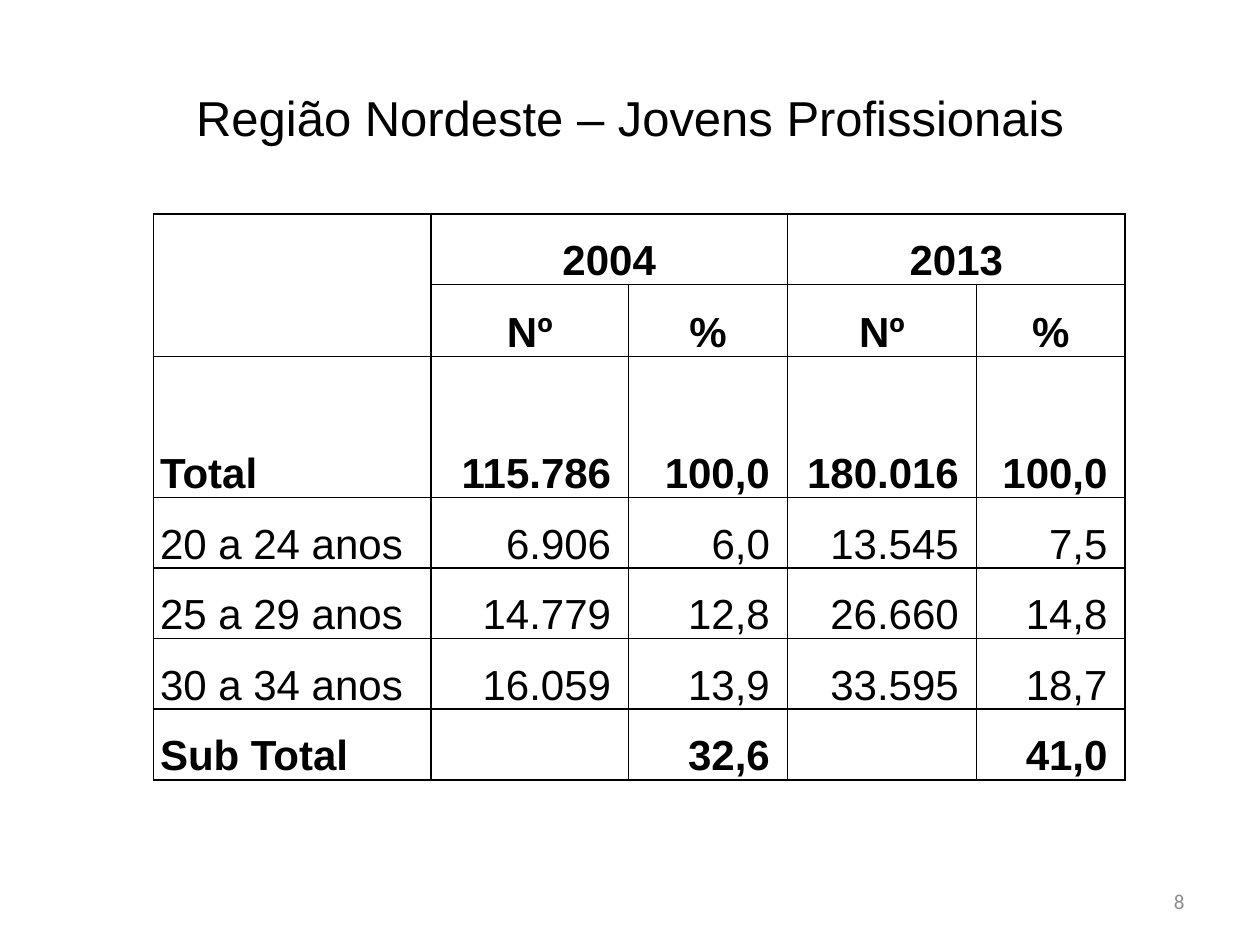
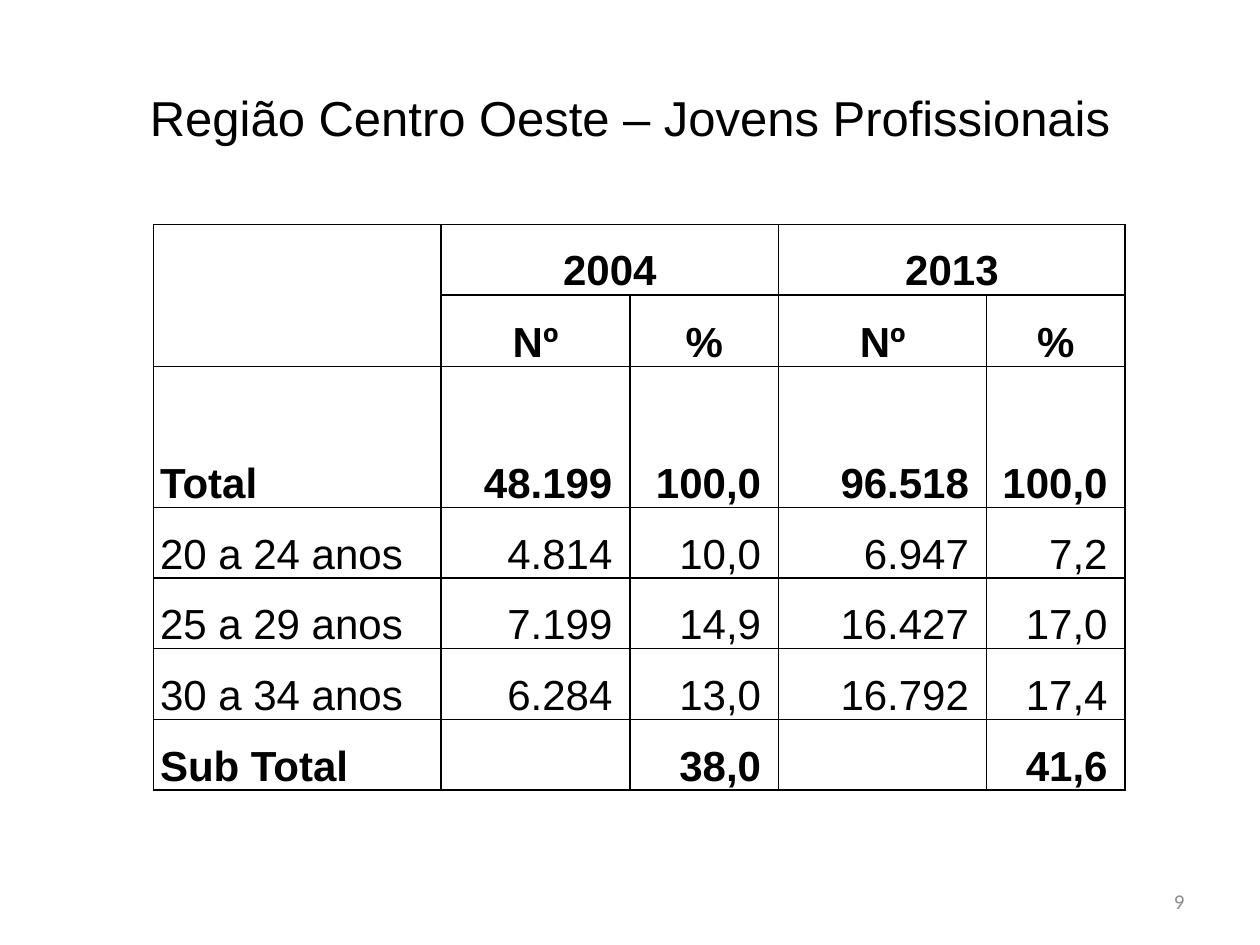
from dataclasses import dataclass

from lxml import etree
from pptx import Presentation
from pptx import util as u
from pptx.dml.color import RGBColor
from pptx.enum import text
from pptx.oxml import ns


@dataclass(frozen=True)
class Theme:
    ink: str = "000000"
    muted: str = "8C8C8C"
    heading_font: str = "Arial"
    number_font: str = "Calibri"
    title_size: int = 28
    table_size: int = 24
    number_size: int = 12
    rule_width: int = 1
    line_spacing: float = 1.07


THEME = Theme()
ALIGN = text.PP_ALIGN
TITLE_BOX = (0.5, 0.3, 9, 1.25)
NUMBER_BOX = (7.17, 6.95, 2.33, 0.4)
TABLE_LEFT = 1.22
ROW_HEIGHTS = [0.56, 0.57, 1.12] + [0.56] * 4
CELL_INSET = 0.05
FIGURE_INSET = 0.14
HEADINGS = [["", "2004", "", "2013", ""], ["", "Nº", "%", "Nº", "%"]]
BOLD_LABELS = ("", "Total", "Sub Total")

REGIONS = [
    {
        "title": "Região Nordeste – Jovens Profissionais",
        "page": "8",
        "top": 1.7,
        "widths": [2.2, 1.57, 1.26, 1.5, 1.18],
        "rows": [
            ["Total", "115.786", "100,0", "180.016", "100,0"],
            ["20 a 24 anos", "6.906", "6,0", "13.545", "7,5"],
            ["25 a 29 anos", "14.779", "12,8", "26.660", "14,8"],
            ["30 a 34 anos", "16.059", "13,9", "33.595", "18,7"],
            ["Sub Total", "", "32,6", "", "41,0"],
        ],
    },
    {
        "title": "Região Centro Oeste – Jovens Profissionais",
        "page": "9",
        "top": 1.78,
        "widths": [2.28, 1.5, 1.18, 1.65, 1.1],
        "rows": [
            ["Total", "48.199", "100,0", "96.518", "100,0"],
            ["20 a 24 anos", "4.814", "10,0", "6.947", "7,2"],
            ["25 a 29 anos", "7.199", "14,9", "16.427", "17,0"],
            ["30 a 34 anos", "6.284", "13,0", "16.792", "17,4"],
            ["Sub Total", "", "38,0", "", "41,6"],
        ],
    },
]


def style_paragraph(paragraph, align, font, size, color, bold=False):
    paragraph.alignment = align
    for target in [paragraph.font] + [run.font for run in paragraph.runs]:
        target.name = font
        target.size = u.Pt(size)
        target.bold = bold
        target.color.rgb = RGBColor.from_string(color)


def add_line_of_text(slide, box, wording, align, font, size, color):
    frame = slide.shapes.add_textbox(*map(u.Inches, box)).text_frame
    frame.word_wrap = True
    frame.vertical_anchor = text.MSO_ANCHOR.MIDDLE
    frame.text = wording
    style_paragraph(frame.paragraphs[0], align, font, size, color)


def rule_cell(cell):
    properties = cell._tc.get_or_add_tcPr()
    for side in ("lnL", "lnR", "lnT", "lnB"):
        line = etree.SubElement(properties, ns.qn(f"a:{side}"), w=str(u.Pt(THEME.rule_width)))
        fill = etree.SubElement(line, ns.qn("a:solidFill"))
        etree.SubElement(fill, ns.qn("a:srgbClr"), val=THEME.ink)


def fill_cell(cell, wording, align, bold):
    rule_cell(cell)
    cell.fill.background()
    cell.vertical_anchor = text.MSO_ANCHOR.BOTTOM
    cell.margin_left = u.Inches(CELL_INSET)
    cell.margin_right = u.Inches(FIGURE_INSET if align == ALIGN.RIGHT else CELL_INSET)
    cell.margin_top = cell.margin_bottom = 0
    cell.text_frame.text = wording
    paragraph = cell.text_frame.paragraphs[0]
    paragraph.line_spacing = THEME.line_spacing
    style_paragraph(paragraph, align, THEME.heading_font, THEME.table_size, THEME.ink, bold)


def add_age_table(slide, left, top, widths, rows):
    grid = HEADINGS + rows
    box = (left, top, sum(widths), sum(ROW_HEIGHTS))
    table = slide.shapes.add_table(len(grid), len(widths), *map(u.Inches, box)).table
    table.first_row = table.horz_banding = False
    for column, width in zip(table.columns, widths):
        column.width = u.Inches(width)
    for row, height in zip(table.rows, ROW_HEIGHTS):
        row.height = u.Inches(height)
    for r, values in enumerate(grid):
        for c, value in enumerate(values):
            if r < len(HEADINGS):
                align = ALIGN.CENTER
            else:
                align = ALIGN.RIGHT if c else ALIGN.LEFT
            fill_cell(table.cell(r, c), value, align, values[0] in BOLD_LABELS)
    table.cell(0, 0).merge(table.cell(1, 0))
    for year_column in (1, 3):
        table.cell(0, year_column).merge(table.cell(0, year_column + 1))


def add_region_slide(deck, region):
    slide = deck.slides.add_slide(deck.slide_layouts[6])
    add_line_of_text(slide, TITLE_BOX, region["title"], ALIGN.CENTER,
                     THEME.heading_font, THEME.title_size, THEME.ink)
    add_age_table(slide, TABLE_LEFT, region["top"], region["widths"], region["rows"])
    add_line_of_text(slide, NUMBER_BOX, region["page"], ALIGN.RIGHT,
                     THEME.number_font, THEME.number_size, THEME.muted)


def main():
    deck = Presentation()
    deck.slide_width, deck.slide_height = u.Inches(10), u.Inches(7.5)
    for region in REGIONS:
        add_region_slide(deck, region)
    deck.save("out.pptx")


if __name__ == "__main__":
    main()
